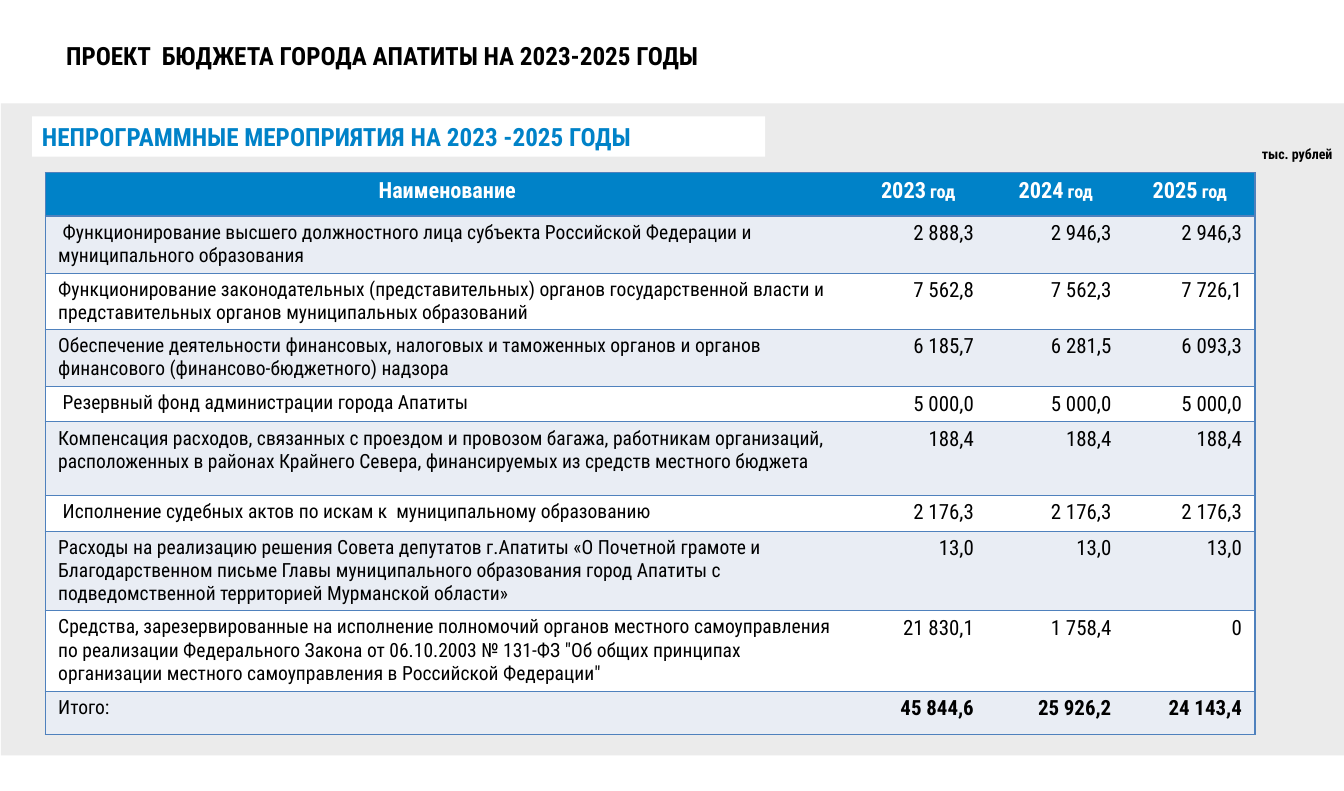
from lxml.etree import SubElement
from pptx import Presentation
from pptx.dml.color import RGBColor
from pptx.enum.shapes import MSO_SHAPE
from pptx.enum.text import MSO_ANCHOR, PP_ALIGN
from pptx.oxml.ns import qn
from pptx.util import Inches, Pt

FONT = "Roboto Condensed"
WIDE, HIGH = 34 / 2.54, 20 / 2.54
HUES = {
    "blue": "0082C8", "edge": "4F81BD", "band": "E9EDF4",
    "grey": "EBEBEB", "white": "FFFFFF", "black": "000000",
}
COLS = [8.01, 1.37, 1.37, 1.3]
HIGHS = [0.43, 0.57, 0.56, 0.57, 0.35, 0.73, 0.36, 0.79, 0.8, 0.43]
YEARS = ["2023", "2024", "2025"]
ROWS = [
    (" Функционирование высшего должностного лица субъекта Российской Федерации "
     "и муниципального образования", "2 888,3", "2 946,3", "2 946,3"),
    ("Функционирование законодательных (представительных) органов "
     "государственной власти и представительных органов муниципальных "
     "образований".replace("представительных органов", "представительных органов"),
     "7 562,8", "7 562,3", "7 726,1"),
    ("Обеспечение деятельности финансовых, налоговых и таможенных органов и "
     "органов финансового (финансово-бюджетного) надзора",
     "6 185,7", " 6 281,5", "6 093,3"),
    (" Резервный фонд администрации города Апатиты",
     "5 000,0", "5 000,0", "5 000,0"),
    ("Компенсация расходов, связанных с проездом и провозом багажа, работникам "
     "организаций, расположенных в районах Крайнего Севера, финансируемых из "
     "средств местного бюджета", "188,4", "188,4", "188,4"),
    (" Исполнение судебных актов по искам к  муниципальному образованию",
     "2 176,3", "2 176,3", "2 176,3"),
    ("Расходы на реализацию решения Совета депутатов г.Апатиты «О Почетной "
     "грамоте и Благодарственном письме Главы муниципального образования город "
     "Апатиты с подведомственной территорией Мурманской области»",
     "13,0", "13,0", "13,0"),
    ("Средства, зарезервированные на исполнение полномочий органов местного "
     "самоуправления по реализации Федерального Закона от 06.10.2003 № 131-ФЗ "
     "\"Об общих принципах организации местного самоуправления в Российской "
     "Федерации\"", "21 830,1", "1 758,4", "0"),
    ("Итого:", "45 844,6", "25 926,2", "24 143,4"),
]


def tint(name):
    return RGBColor.from_string(HUES[name])


def write(frame, runs, hue="black", bold=False, align=PP_ALIGN.LEFT):
    """Fill the first paragraph with (text, size) runs."""
    para = frame.paragraphs[0]
    para.alignment = align
    for text, size in runs:
        run = para.add_run()
        run.text = text
        font = run.font
        font.name, font.size, font.bold = FONT, Pt(size), bold
        font.color.rgb = tint(hue)


def pad(item, side, top):
    item.margin_left = item.margin_right = Inches(side)
    item.margin_top = item.margin_bottom = Inches(top)


def label(shape, text, size, hue="black", align=PP_ALIGN.LEFT,
          side=0.1, top=0.05):
    """Put one bold line into a shape."""
    frame = shape.text_frame
    frame.word_wrap = True
    frame.vertical_anchor = MSO_ANCHOR.TOP
    pad(frame, side, top)
    write(frame, [(text, size)], hue, True, align)


def text_box(slide, box):
    return slide.shapes.add_textbox(*map(Inches, box))


def panel(slide, box, hue):
    shape = slide.shapes.add_shape(MSO_SHAPE.RECTANGLE, *map(Inches, box))
    shape.shadow.inherit = False
    shape.fill.solid()
    shape.fill.fore_color.rgb = tint(hue)
    shape.line.fill.background()
    return shape


def rule(cell, sides):
    """Draw the named cell edges and clear the others."""
    props = cell._tc.get_or_add_tcPr()
    for side in "LRTB":
        line = SubElement(props, qn("a:ln" + side), w=str(Pt(1)))
        if side in sides:
            fill = SubElement(line, qn("a:solidFill"))
            SubElement(fill, qn("a:srgbClr"), val=HUES["edge"])
        else:
            SubElement(line, qn("a:noFill"))


def dress(cell, col, hue):
    left = "L" if col == 0 else ""
    right = "R" if col == len(COLS) - 1 else ""
    rule(cell, left + right + "TB")
    cell.fill.solid()
    cell.fill.fore_color.rgb = tint(hue)
    cell.vertical_anchor = MSO_ANCHOR.TOP
    pad(cell, 0.13, 0.05)


def budget(slide, left, top):
    size = map(Inches, (left, top, sum(COLS), sum(HIGHS)))
    table = slide.shapes.add_table(len(HIGHS), len(COLS), *size).table
    table.first_row = table.horz_banding = False
    for col, width in zip(table.columns, COLS):
        col.width = Inches(width)
    for row, high in zip(table.rows, HIGHS):
        row.height = Inches(high)

    heads = [[("Наименование", 16)]]
    heads += [[(year, 16), (" год", 13)] for year in YEARS]
    for col, runs in enumerate(heads):
        cell = table.cell(0, col)
        dress(cell, col, "blue")
        write(cell.text_frame, runs, "white", True, PP_ALIGN.CENTER)

    for row, texts in enumerate(ROWS, 1):
        for col, text in enumerate(texts):
            cell = table.cell(row, col)
            dress(cell, col, "band" if row % 2 else "white")
            if col == 0:
                write(cell.text_frame, [(text, 14)])
            else:
                write(cell.text_frame, [(text, 15)], bold=row == len(ROWS),
                      align=PP_ALIGN.RIGHT)


def main():
    deck = Presentation()
    deck.slide_width, deck.slide_height = Inches(WIDE), Inches(HIGH)
    slide = deck.slides.add_slide(deck.slide_layouts[6])
    panel(slide, (0.01, 1.03, 13.39, 6.49), "grey")
    budget(slide, 0.45, 1.72)
    label(text_box(slide, (0.56, 0.35, 8.98, 0.4)),
          "ПРОЕКТ  БЮДЖЕТА ГОРОДА АПАТИТЫ НА 2023-2025 ГОДЫ", 18)
    label(panel(slide, (0.32, 1.16, 7.3, 0.4), "white"),
          "НЕПРОГРАММНЫЕ МЕРОПРИЯТИЯ НА 2023 -2025 ГОДЫ", 18, "blue")
    label(text_box(slide, (12.17, 1.39, 1.22, 0.29)), "тыс. рублей", 10,
          align=PP_ALIGN.RIGHT, side=0.12, top=0.06)
    deck.save("out.pptx")


if __name__ == "__main__":
    main()
